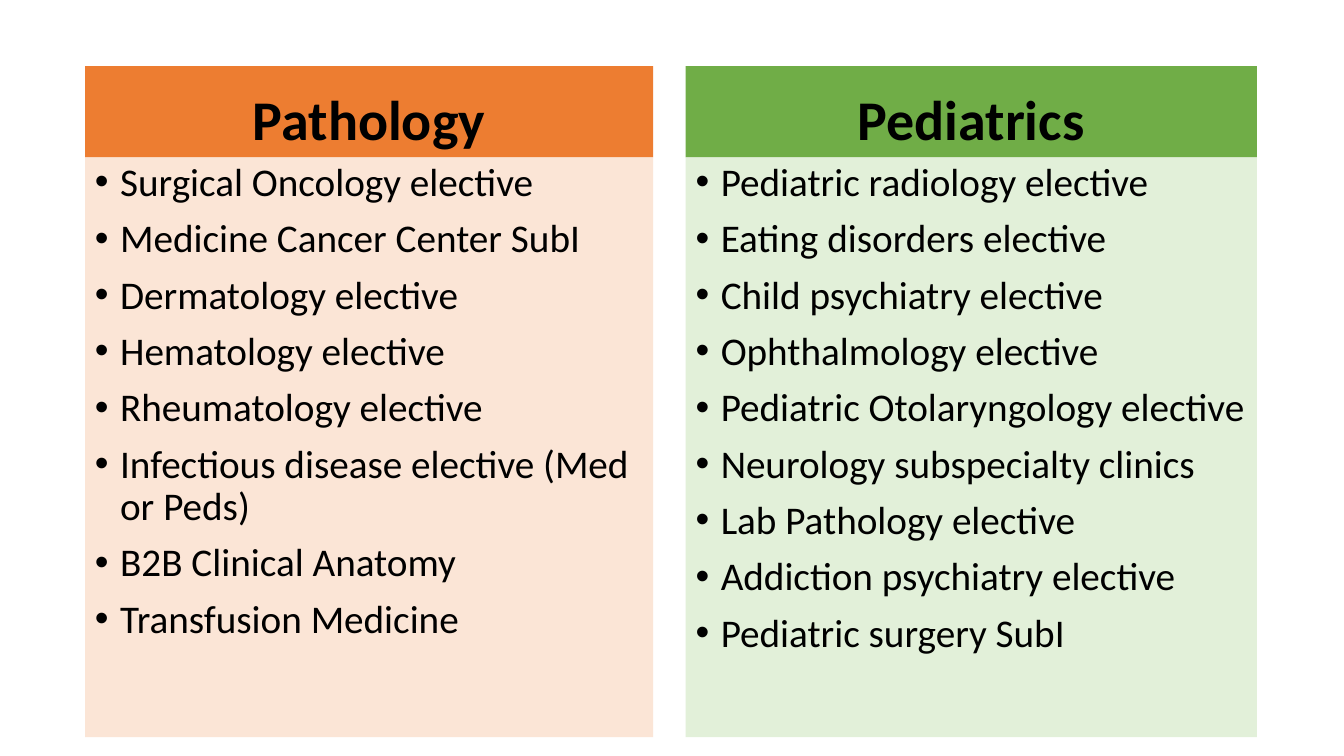
from lxml import etree
from pptx import Presentation
from pptx.dml.color import RGBColor
from pptx.enum.shapes import MSO_SHAPE
from pptx.enum.text import MSO_ANCHOR, PP_ALIGN
from pptx.oxml.ns import qn
from pptx.util import Pt

RECTANGLE = MSO_SHAPE.RECTANGLE
TOP, BOTTOM = MSO_ANCHOR.TOP, MSO_ANCHOR.BOTTOM
LEFT, CENTER = PP_ALIGN.LEFT, PP_ALIGN.CENTER

BLACK = RGBColor(0x00, 0x00, 0x00)
ORANGE = RGBColor(0xED, 0x7D, 0x31)
PALE_ORANGE = RGBColor(0xFB, 0xE5, 0xD6)
GREEN = RGBColor(0x70, 0xAD, 0x47)
PALE_GREEN = RGBColor(0xE2, 0xF0, 0xD9)

EMU_PER_PX = 9525  # 96 px to the inch
PAGE_WIDTH, PAGE_HEIGHT = 1280, 720
HEADER_TOP, HEADER_HEIGHT, LIST_HEIGHT = 63, 87, 552
BULLET_INDENT = 24

# Left edge, width, header colour, list colour, heading, electives
COLUMNS = [
    (81, 541, ORANGE, PALE_ORANGE, "Pathology", [
        "Surgical Oncology elective",
        "Medicine Cancer Center SubI",
        "Dermatology elective",
        "Hematology elective",
        "Rheumatology elective",
        "Infectious disease elective (Med or Peds)",
        "B2B Clinical Anatomy",
        "Transfusion Medicine",
    ]),
    (653, 544, GREEN, PALE_GREEN, "Pediatrics", [
        "Pediatric radiology elective",
        "Eating disorders elective",
        "Child psychiatry elective",
        "Ophthalmology elective",
        "Pediatric Otolaryngology elective",
        "Neurology subspecialty clinics",
        "Lab Pathology elective",
        "Addiction psychiatry elective",
        "Pediatric surgery SubI",
    ]),
]


def px(length):
    return length * EMU_PER_PX


class SlideBuilder:
    font_name = "Calibri"
    text_color = BLACK
    line_spacing = 0.9
    space_before = Pt(10)

    def __init__(self, page):
        self.page = page

    def panel(self, left, top, width, height, color, anchor):
        """Add a plain filled rectangle and return its text frame."""
        box = self.page.shapes.add_shape(
            RECTANGLE, px(left), px(top), px(width), px(height))
        box.shadow.inherit = False
        box.fill.solid()
        box.fill.fore_color.rgb = color
        box.line.fill.background()
        frame = box.text_frame
        frame.word_wrap = True
        frame.vertical_anchor = anchor
        return frame

    def add_text(self, para, text, size, align, bold=False):
        para.alignment = align
        para.line_spacing = self.line_spacing
        para.space_before = self.space_before
        span = para.add_run()
        span.text = text
        span.font.name = self.font_name
        span.font.size = Pt(size)
        span.font.bold = bold
        span.font.color.rgb = self.text_color

    def bullet(self, para):
        properties = para._p.get_or_add_pPr()
        properties.set("marL", str(px(BULLET_INDENT)))
        properties.set("indent", str(-px(BULLET_INDENT)))
        etree.SubElement(properties, qn("a:buFont"), typeface="Arial")
        etree.SubElement(properties, qn("a:buChar"), char="•")

    def header(self, left, top, width, height, color, text):
        frame = self.panel(left, top, width, height, color, BOTTOM)
        self.add_text(frame.paragraphs[0], text, 40, CENTER, bold=True)

    def bullet_list(self, left, top, width, height, color, items):
        frame = self.panel(left, top, width, height, color, TOP)
        for index, item in enumerate(items):
            para = frame.add_paragraph() if index else frame.paragraphs[0]
            self.add_text(para, item, 28, LEFT)
            self.bullet(para)


def main():
    deck = Presentation()
    deck.slide_width, deck.slide_height = px(PAGE_WIDTH), px(PAGE_HEIGHT)
    builder = SlideBuilder(deck.slides.add_slide(deck.slide_layouts[6]))

    # Each specialty: a heading bar with its electives directly below
    for left, width, header_color, list_color, heading, electives in COLUMNS:
        builder.header(left, HEADER_TOP, width, HEADER_HEIGHT,
                       header_color, heading)
        builder.bullet_list(left, HEADER_TOP + HEADER_HEIGHT, width,
                            LIST_HEIGHT, list_color, electives)

    deck.save("out.pptx")


if __name__ == "__main__":
    main()
